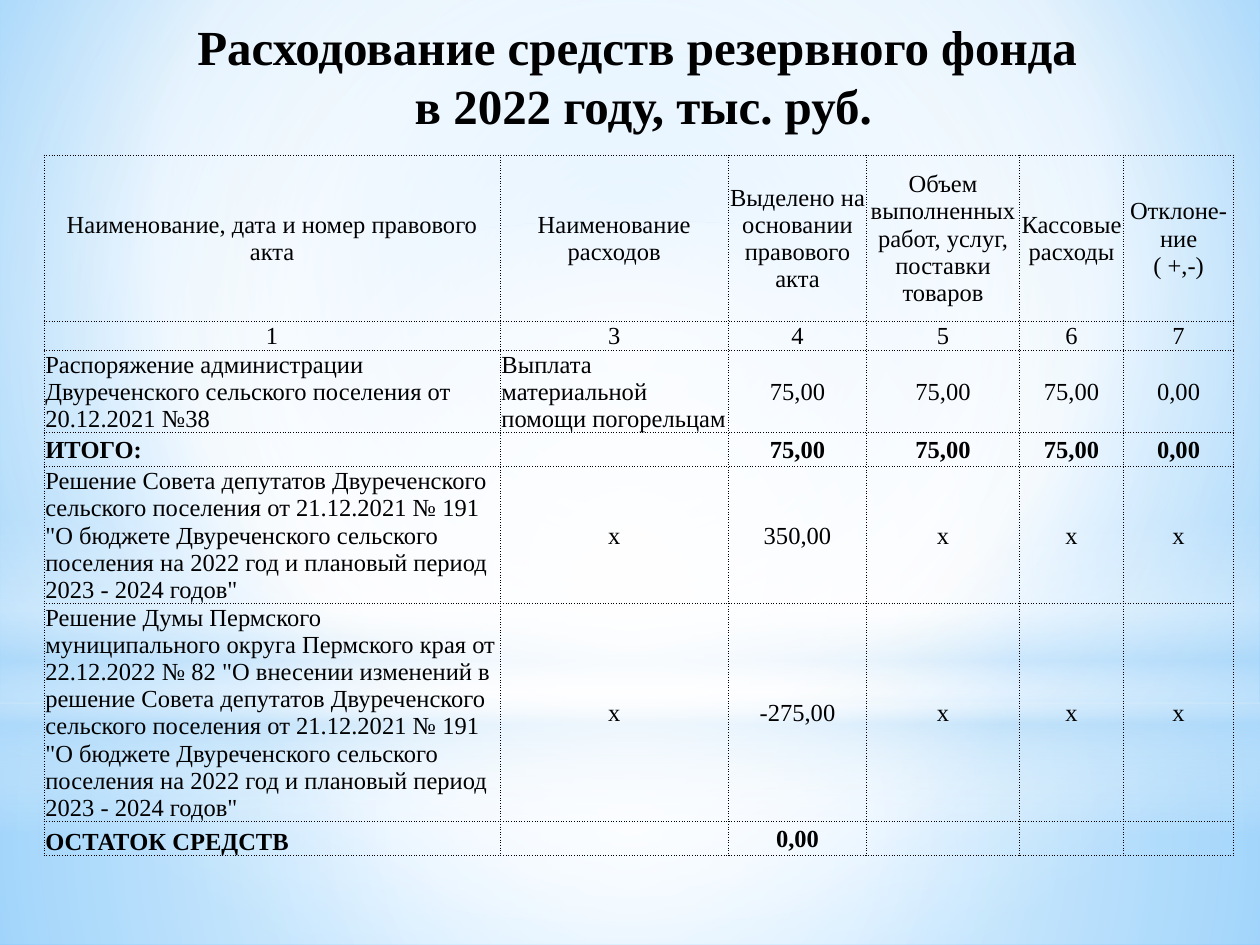
import pptx
import pptx.dml.color
import pptx.enum.shapes
import pptx.enum.text
import pptx.oxml
import pptx.oxml.ns
import pptx.util
from lxml import etree

Inches = pptx.util.Inches
Pt = pptx.util.Pt
RGBColor = pptx.dml.color.RGBColor
MSO_SHAPE = pptx.enum.shapes.MSO_SHAPE
PP_ALIGN = pptx.enum.text.PP_ALIGN
ANCHOR = pptx.enum.text.MSO_ANCHOR
NS = pptx.oxml.ns.nsdecls("a")

BLACK = RGBColor(0x00, 0x00, 0x00)
WHITE = RGBColor(0xFF, 0xFF, 0xFF)
MIST = RGBColor(0xB4, 0xDC, 0xFA)
SKY = RGBColor(0x9E, 0xD5, 0xFF)
AZURE = RGBColor(0x5B, 0xB9, 0xFF)

CENTER = (50, 50, 50, 50)
COLS = (3.62, 1.81, 1.1, 1.21, 0.83, 0.87)
ROW_HEIGHTS = (1.32, 0.23, 0.46, 0.27, 0.93, 1.39, 0.27)
HEADER_ROW, NUMBER_ROW, TOTAL_ROW, BALANCE_ROW = 0, 1, 3, 6
ROWS = (
    ("Наименование, дата и номер правового акта", "Наименование расходов",
     "Выделено на основании правового акта",
     "Объем выполненных работ, услуг, поставки товаров",
     "Кассовые расходы", "Отклоне-ние\n( +,-)"),
    ("1", "3", "4", "5", "6", "7"),
    ("Распоряжение администрации Двуреченского сельского поселения от 20.12.2021 №38",
     "Выплата материальной помощи погорельцам", "75,00", "75,00", "75,00", "0,00"),
    ("ИТОГО:", "", "75,00", "75,00", "75,00", "0,00"),
    ("Решение Совета депутатов Двуреченского сельского поселения от 21.12.2021 № 191 "
     "\"О бюджете Двуреченского сельского поселения на 2022 год и плановый период "
     "2023 - 2024 годов\"", "х", "350,00", "х", "х", "х"),
    ("Решение Думы Пермского муниципального округа Пермского края от 22.12.2022 № 82 "
     "\"О внесении изменений в решение Совета депутатов Двуреченского сельского поселения "
     "от 21.12.2021 № 191 \"О бюджете Двуреченского сельского поселения на 2022 год и "
     "плановый период 2023 - 2024 годов\"", "х", "-275,00", "х", "х", "х"),
    ("ОСТАТОК СРЕДСТВ", "", "0,00", "", "", ""),
)


def gradient(stops, center=None):
    """Gradient of (position, colour, opacity) in percent: round about center, else top to bottom."""
    gs = "".join(
        f'<a:gs pos="{pos * 1000}"><a:srgbClr val="{color}">'
        f'<a:alpha val="{alpha * 1000}"/></a:srgbClr></a:gs>'
        for pos, color, alpha in stops)
    if center:
        sides = " ".join(f'{k}="{v * 1000}"' for k, v in zip("ltrb", center))
        way = f'<a:path path="circle"><a:fillToRect {sides}/></a:path>'
    else:
        way = '<a:lin ang="5400000" scaled="0"/>'
    return pptx.oxml.parse_xml(
        f'<a:gradFill {NS} rotWithShape="1"><a:gsLst>{gs}</a:gsLst>{way}</a:gradFill>')


class Deck:
    font = "Times New Roman"

    def __init__(self):
        self.prs = pptx.Presentation()
        self.prs.slide_width, self.prs.slide_height = Inches(10), Inches(7.5)
        self.s = self.prs.slides.add_slide(self.prs.slide_layouts[5])

    def style(self, p, size, bold=False, align=PP_ALIGN.CENTER):
        p.alignment = align
        p.font.name, p.font.size, p.font.bold = self.font, Pt(size), bold
        p.font.color.rgb = BLACK

    def background(self, fill):
        self.s.background.fill.solid()
        solid = self.s._element.find(".//" + pptx.oxml.ns.qn("p:bgPr"))[0]
        solid.getparent().replace(solid, fill)

    def glow(self, shape, box, fill):
        sp = self.s.shapes.add_shape(shape, *map(Inches, box))
        sp.shadow.inherit = False
        sp.line.fill.background()
        sp.fill.solid()
        solid = sp._element.spPr.find(pptx.oxml.ns.qn("a:solidFill"))
        solid.getparent().replace(solid, fill)

    def title(self, text, box):
        sp = self.s.shapes.title
        sp.left, sp.top, sp.width, sp.height = map(Inches, box)
        self.s.shapes._spTree.append(sp._element)  # in front of the glows
        tf = sp.text_frame
        tf.word_wrap, tf.vertical_anchor = True, ANCHOR.TOP
        tf.auto_size = pptx.enum.text.MSO_AUTO_SIZE.NONE
        tf.paragraphs[0].text = text
        self.style(tf.paragraphs[0], 28, bold=True)

    def cell(self, cell, text, bold, align, anchor):
        cell.fill.background()
        cell.margin_left = cell.margin_right = cell.margin_top = Inches(0.01)
        cell.margin_bottom = 0
        cell.vertical_anchor = anchor
        cell.text_frame.text = text
        for p in cell.text_frame.paragraphs:
            self.style(p, 14, bold, align)
            if not text:
                etree.SubElement(p._p, pptx.oxml.ns.qn("a:endParaRPr"), sz="1400")
        for i, side in enumerate("LRTB"):
            cell._tc.tcPr.insert(i, pptx.oxml.parse_xml(
                f'<a:ln{side} {NS} w="6350"><a:solidFill><a:srgbClr val="{BLACK}"/>'
                f'</a:solidFill><a:prstDash val="dot"/></a:ln{side}>'))

    def table(self, left, top):
        table = self.s.shapes.add_table(
            len(ROWS), len(COLS), Inches(left), Inches(top),
            Inches(sum(COLS)), Inches(sum(ROW_HEIGHTS))).table
        table.first_row = table.horz_banding = False
        for column, width in zip(table.columns, COLS):
            column.width = Inches(width)
        for r, (row, height) in enumerate(zip(ROWS, ROW_HEIGHTS)):
            table.rows[r].height = Inches(height)
            for c, text in enumerate(row):
                wordy = c == 0 or (c == 1 and r == 2)
                align = PP_ALIGN.LEFT if wordy and r > NUMBER_ROW else PP_ALIGN.CENTER
                low = r == NUMBER_ROW or (r == BALANCE_ROW and c == 0)
                self.cell(table.cell(r, c), text, r in (TOTAL_ROW, BALANCE_ROW), align,
                          ANCHOR.BOTTOM if low else ANCHOR.MIDDLE)


def main():
    deck = Deck()
    deck.background(gradient(
        [(0, SKY, 100), (60, WHITE, 100), (100, AZURE, 100)], (20, 10, 20, 60)))
    deck.glow(MSO_SHAPE.RECTANGLE, (0, 5.58, 10, 1.92), gradient(
        [(0, WHITE, 91), (37, WHITE, 76), (100, MIST, 79)], CENTER))
    deck.glow(MSO_SHAPE.RECTANGLE, (0, 0, 10, 5.58), gradient(
        [(0, WHITE, 89), (48, WHITE, 62), (100, MIST, 79)], CENTER))
    deck.glow(MSO_SHAPE.RECTANGLE, (0, 4.12, 10, 2.5), gradient(
        [(0, WHITE, 0), (29, WHITE, 30), (45, MIST, 40),
         (55, WHITE, 26), (65, MIST, 60), (100, WHITE, 0)]))
    deck.glow(MSO_SHAPE.OVAL, (0, 1.75, 10, 5.58), gradient(
        [(0, WHITE, 100), (56, WHITE, 0)], CENTER))
    deck.title("Расходование средств резервного фонда \vв 2022 году, тыс. руб.",
               (0.59, 0.08, 9.03, 0.59))
    deck.table(0.35, 1.23)
    deck.prs.save("out.pptx")


if __name__ == "__main__":
    main()
